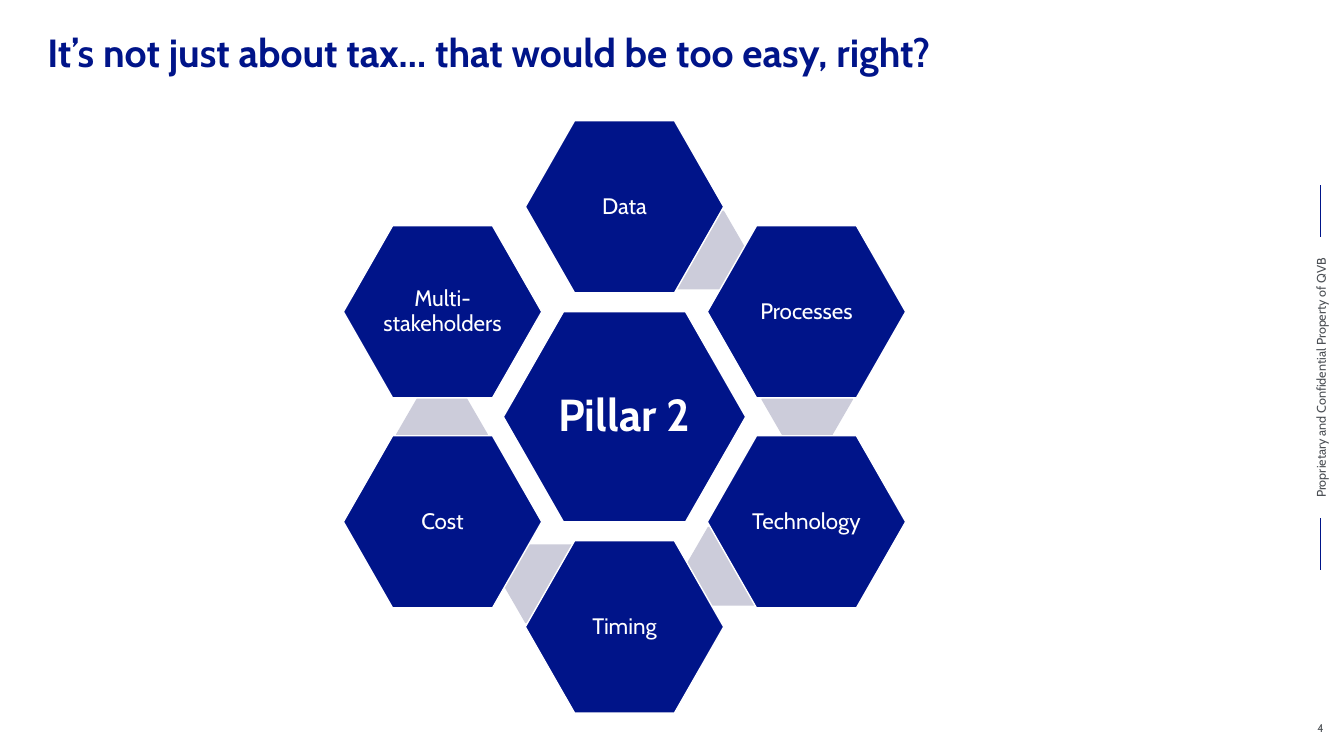
from math import cos, radians, sin

from lxml import etree
from pptx import Presentation
from pptx.dml.color import RGBColor
from pptx.enum.shapes import MSO_CONNECTOR, MSO_SHAPE
from pptx.enum.text import MSO_ANCHOR as ANCHOR, MSO_AUTO_SIZE, PP_ALIGN as ALIGN
from pptx.oxml.ns import qn
from pptx.util import Inches, Pt

W, H = Inches(13.33), Inches(7.5)
NAVY, GREY, PALE, WHITE = "001489", "4B4F54", "CCCCDA", "FFFFFF"
TOPICS = ["Data", "Processes", "Technology", "Timing", "Cost", "Multi-stakeholders"]


def rgb(value):
    """Turn a hex string into a colour."""
    return RGBColor.from_string(value)


def share(x, y, w, h):
    """Turn percentages of the slide's size into a box."""
    return [int(v * size / 100) for v, size in zip((x, y, w, h), (W, H, W, H))]


def write(shape, text, size, color, bold=False, align=ALIGN.CENTER,
          anchor=ANCHOR.MIDDLE, insets=(0, 0, 0, 0), spacing=None):
    """Fill a shape with one formatted run."""
    tf = shape.text_frame
    tf.word_wrap = True
    tf.auto_size = MSO_AUTO_SIZE.NONE
    tf.vertical_anchor = anchor
    tf.margin_left, tf.margin_top, tf.margin_right, tf.margin_bottom = map(Inches, insets)
    p = tf.paragraphs[0]
    p.alignment = align
    p.line_spacing = spacing
    r = p.add_run()
    r.text = text
    r.font.name, r.font.size, r.font.bold = "Cabin", Pt(size), bold
    r.font.color.rgb = rgb(color)


def add_title(s, box, text):
    """Place the slide title in its box."""
    title = s.shapes.title
    title.left, title.top, title.width, title.height = box
    write(title, text, 28, NAVY, True, ALIGN.LEFT, ANCHOR.TOP, (0, 0.05, 0.04, 0.05), 0.9)


def add_hexagon(s, center, size, fill, adj=0.286, outlined=True):
    """Draw a hexagon around a centre point."""
    (cx, cy), (w, h) = center, size
    sp = s.shapes.add_shape(MSO_SHAPE.HEXAGON, int(cx - w / 2), int(cy - h / 2), int(w), int(h))
    sp.shadow.inherit = False
    sp.adjustments[0], sp.adjustments[1] = adj, 1.155
    sp.fill.solid()
    sp.fill.fore_color.rgb = rgb(fill)
    if outlined:
        sp.line.color.rgb = rgb(WHITE)
        sp.line.width = Pt(1)
    else:
        sp.line.fill.background()
    return sp


def add_ring(s, box, hub_text, topics):
    """Set topics clockwise around a hub, with a link between neighbours."""
    x, y, w, h = box
    hub = x + w / 2, y + h / 2

    def polar(angle, radius):
        """Find a point by its clockwise angle from the top of the ring."""
        a = radians(angle)
        return hub[0] + radius * sin(a), hub[1] - radius * cos(a)

    sp = add_hexagon(s, hub, (w * 0.43, h * 0.355), NAVY)
    write(sp, hub_text, 32, WHITE, True, insets=[0.04] * 4, spacing=0.9)
    step = 360 / len(topics)
    for i, topic in enumerate(topics):
        if i < len(topics) - 1:
            add_hexagon(s, polar(i * step + 24.5, h * 0.31), (w * 0.163, h * 0.133),
                        PALE, 0.289, False)
        sp = add_hexagon(s, polar(i * step, h * 0.355), (w * 0.352, h * 0.291), NAVY)
        write(sp, topic, 16, WHITE, insets=[0.02] * 4, spacing=0.9)


def add_side_note(s, box, text):
    """Run a note up the margin between two rules."""
    x, y, w, h = box
    cx, cy = x + w // 2, y + h // 2
    length, depth = int(h * 0.864), Inches(0.25)
    note = s.shapes.add_textbox(cx - length // 2, cy - depth // 2, length, depth)
    note.rotation = 270
    write(note, text, 9, GREY, insets=(0.1, 0.05, 0.1, 0.05))
    rule = int(h * 0.135)
    for top in (y, y + h - rule):
        line = s.shapes.add_connector(MSO_CONNECTOR.STRAIGHT, cx, top, cx, top + rule)
        line.line.color.rgb = rgb(NAVY)
        line.line.width = Pt(0.5)
        etree.SubElement(line._element.spPr, qn("a:effectLst"))


def add_page_number(s, box, number):
    """Place the page number in its box."""
    write(s.shapes.add_textbox(*box), number, 8, GREY, anchor=ANCHOR.BOTTOM)


def main():
    """Build and save the slide."""
    prs = Presentation()
    prs.slide_width, prs.slide_height = W, H
    s = prs.slides.add_slide(prs.slide_layouts[5])
    add_page_number(s, share(96.5, 95.47, 3.5, 1.73), "4")
    add_side_note(s, share(97.3, 24.53, 1.95, 50.93),
                  "Proprietary and Confidential Property of QVB")
    add_title(s, share(3.53, 3.73, 93, 7.07),
              "It’s not just about tax… that would be too easy, right?")
    add_ring(s, share(25.5, 16, 41.94, 78.27), "Pillar 2", TOPICS)
    prs.save("out.pptx")


if __name__ == "__main__":
    main()
